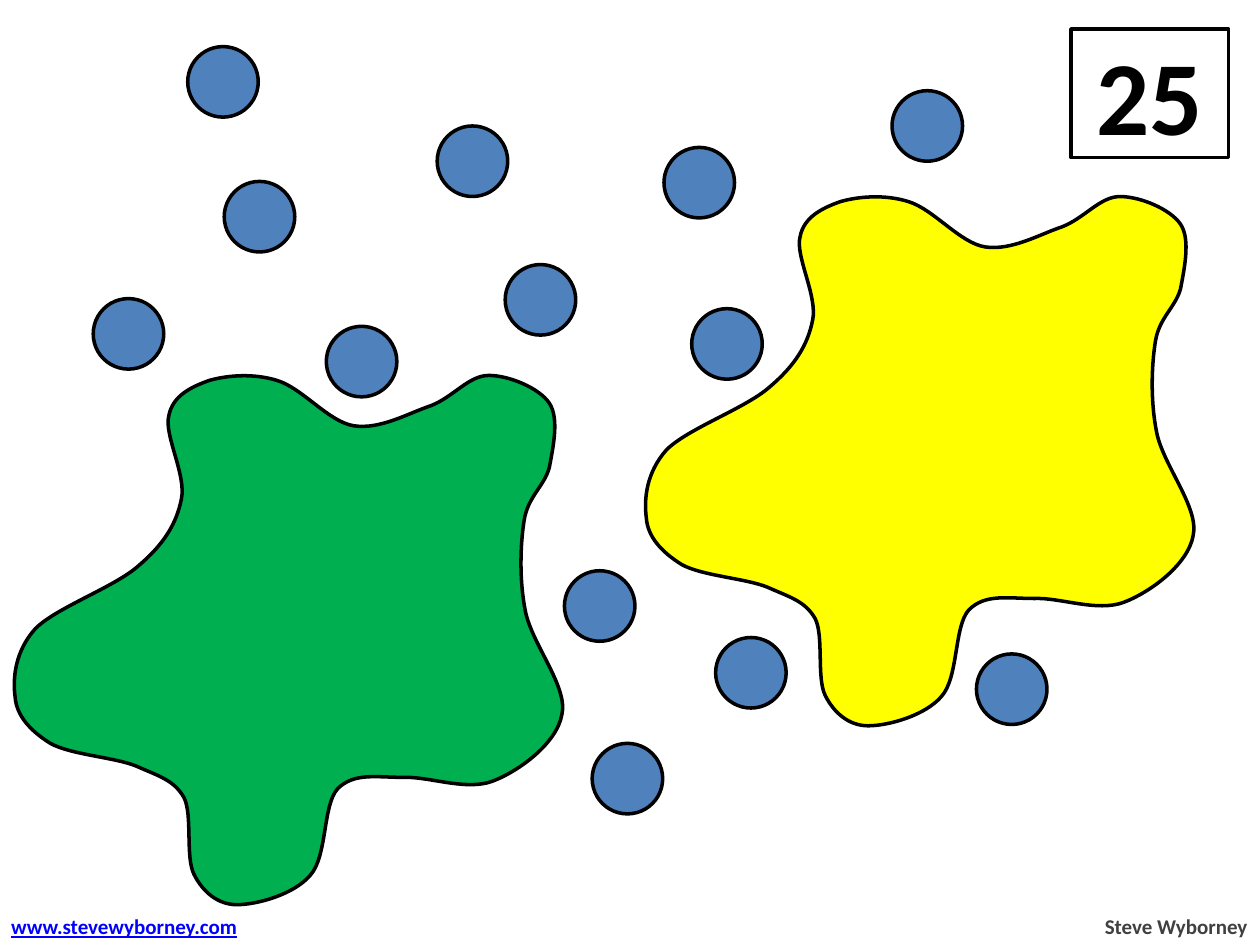
from pptx import Presentation
from pptx.dml.color import RGBColor
from pptx.enum.shapes import MSO_SHAPE as Preset
from pptx.enum.text import MSO_ANCHOR as Anchor, PP_ALIGN as Align
from pptx.oxml.ns import qn
from pptx.util import Inches, Pt
from lxml.etree import SubElement

BLACK = RGBColor(0x00, 0x00, 0x00)
WHITE = RGBColor(0xFF, 0xFF, 0xFF)
GRAY = RGBColor(0x40, 0x40, 0x40)
LINK_BLUE = RGBColor(0x00, 0x00, 0xFF)
DOT_BLUE = RGBColor(0x4F, 0x81, 0xBD)
GREEN = RGBColor(0x00, 0xB0, 0x50)
YELLOW = RGBColor(0xFF, 0xFF, 0x00)

# Content: lengths in inches
TOTAL = "25"
TOTAL_BOX = (8.5, 0.23, 1.25, 1.02)
FOOTERS = [
    ("Steve Wyborney", (8.66, 7.2, 1.34, 0.3),
     dict(color=GRAY, align=Align.RIGHT)),
    ("www.stevewyborney.com", (-0.01, 7.2, 2.05, 0.3),
     dict(color=LINK_BLUE, underline=True)),
]
DOT_SIZE = 0.56
DOTS = [
    (1.49, 0.37), (3.47, 1), (5.27, 1.17), (7.08, 0.72), (1.78, 1.44),
    (4.01, 2.1), (5.49, 2.45), (0.74, 2.37), (2.59, 2.59), (4.48, 4.53),
    (5.68, 5.06), (4.7, 5.9), (7.75, 5.19),
]

# Splat outline in hundredths of an inch: a start, then curves of
# two control points and an end point each
SPLAT_START = (40, 590)
SPLAT_CURVES = [
    ((24, 580), (13, 568), (12, 553)),
    ((10, 538), (12, 517), (28, 499)),
    ((45, 482), (91, 466), (110, 449)),
    ((130, 432), (140, 416), (144, 396)),
    ((148, 377), (130, 345), (134, 330)),
    ((137, 314), (152, 307), (166, 302)),
    ((180, 298), (201, 296), (220, 302)),
    ((240, 308), (261, 335), (281, 338)),
    ((302, 341), (324, 328), (342, 322)),
    ((360, 315), (372, 298), (388, 298)),
    ((404, 298), (428, 308), (436, 320)),
    ((444, 332), (439, 355), (436, 371)),
    ((432, 386), (419, 394), (416, 413)),
    ((413, 432), (412, 460), (417, 485)),
    ((422, 511), (451, 545), (446, 567)),
    ((442, 590), (412, 612), (391, 620)),
    ((370, 628), (340, 616), (320, 617)),
    ((299, 617), (281, 613), (268, 626)),
    ((256, 639), (260, 680), (246, 695)),
    ((233, 710), (204, 718), (188, 718)),
    ((173, 718), (161, 708), (154, 694)),
    ((147, 680), (153, 647), (146, 633)),
    ((138, 619), (126, 616), (108, 608)),
    ((91, 601), (56, 599), (40, 590)),
]
SPLATS = [(GREEN, (0, 0)), (YELLOW, (501, -142))]


def paint(shape, fill):
    shape.shadow.inherit = False
    shape.fill.solid()
    shape.fill.fore_color.rgb = fill
    shape.line.color.rgb = BLACK
    shape.line.width = Pt(2)


def add_preset(page, preset, place, fill):
    shape = page.shapes.add_shape(preset, *map(Inches, place))
    paint(shape, fill)
    return shape


def write(frame, text, size=12, color=BLACK, align=Align.LEFT, underline=None):
    para = frame.paragraphs[0]
    para.alignment = align
    span = para.add_run()
    span.text = text
    font = span.font
    font.name, font.size, font.bold = "Calibri", Pt(size), True
    font.color.rgb = color
    font.underline = underline


def add_splat(page, fill, shift):
    def move(point):
        return point[0] + shift[0], point[1] + shift[1]

    builder = page.shapes.build_freeform(*move(SPLAT_START), scale=Inches(0.01))
    builder.add_line_segments(
        [move(point) for curve in SPLAT_CURVES for point in curve], close=True)
    shape = builder.convert_to_shape()
    paint(shape, fill)

    # Turn every three straight segments into one Bezier curve
    outline = next(shape.element.iter(qn("a:path")))
    close = outline.find(qn("a:close"))
    lines = outline.findall(qn("a:lnTo"))
    for first in range(0, len(lines), 3):
        curve = SubElement(outline, qn("a:cubicBezTo"))
        for line in lines[first:first + 3]:
            curve.append(line[0])
            outline.remove(line)
    outline.append(close)


def main():
    deck = Presentation()
    deck.slide_width, deck.slide_height = Inches(10), Inches(7.5)
    page = deck.slides.add_slide(deck.slide_layouts[6])

    # Total in the corner
    box = add_preset(page, Preset.RECTANGLE, TOTAL_BOX, WHITE)
    box.text_frame.vertical_anchor = Anchor.MIDDLE
    write(box.text_frame, TOTAL, size=60, align=Align.CENTER)

    # Footers
    for text, place, style in FOOTERS:
        box = page.shapes.add_textbox(*map(Inches, place))
        box.text_frame.word_wrap = False
        write(box.text_frame, text, **style)

    # Dots to count
    for left, top in DOTS:
        add_preset(page, Preset.OVAL, (left, top, DOT_SIZE, DOT_SIZE), DOT_BLUE)

    # Splats
    for fill, shift in SPLATS:
        add_splat(page, fill, shift)

    deck.save("out.pptx")


if __name__ == "__main__":
    main()
